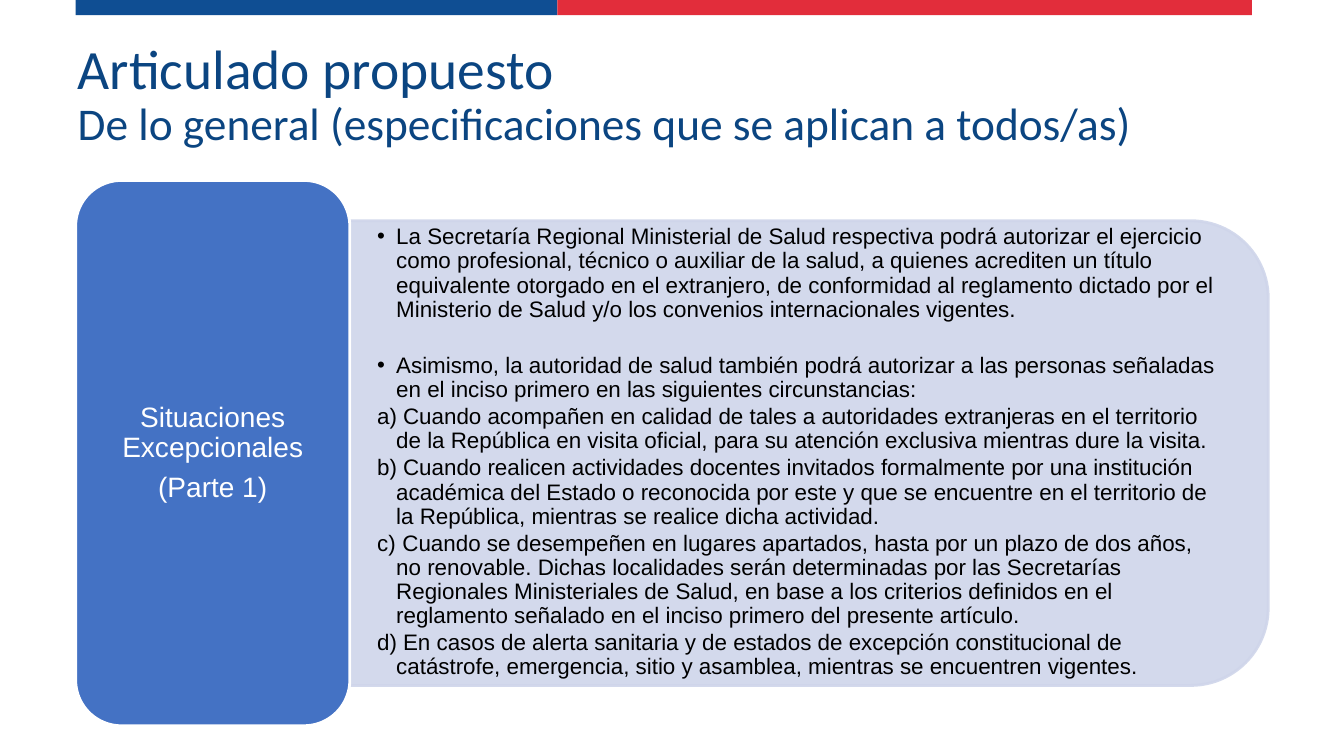
import pptx
import pptx.dml.color
import pptx.enum.shapes
import pptx.enum.text
import pptx.oxml.ns
import pptx.util
import lxml.etree

RGB = pptx.dml.color.RGBColor
KIND = pptx.enum.shapes.MSO_SHAPE
ALIGN = pptx.enum.text.PP_ALIGN
Pt = pptx.util.Pt
Inches = pptx.util.Inches

NAVY = RGB(0x0F, 0x4E, 0x93)
RED = RGB(0xE2, 0x2D, 0x3B)
INK = RGB(0x0B, 0x45, 0x81)
BLUE = RGB(0x44, 0x72, 0xC4)
PALE = RGB(0xCF, 0xD5, 0xEA)
WHITE = RGB(0xFF, 0xFF, 0xFF)
BLACK = RGB(0, 0, 0)

POINTS = [
    "La Secretaría Regional Ministerial de Salud respectiva podrá autorizar el ejercicio como profesional, "
    "técnico o auxiliar de la salud, a quienes acrediten un título equivalente otorgado en el extranjero, "
    "de conformidad al reglamento dictado por el Ministerio de Salud y/o los convenios internacionales vigentes.",
    "Asimismo, la autoridad de salud también podrá autorizar a las personas señaladas en el inciso primero "
    "en las siguientes circunstancias:",
]
CASES = [
    " Cuando acompañen en calidad de tales a autoridades extranjeras en el territorio de la República "
    "en visita oficial, para su atención exclusiva mientras dure la visita.",
    " Cuando realicen actividades docentes invitados formalmente por una institución académica del Estado "
    "o reconocida por este y que se encuentre en el territorio de la República, mientras se realice dicha actividad.",
    " Cuando se desempeñen en lugares apartados, hasta por un plazo de dos años, no renovable. Dichas "
    "localidades serán determinadas por las Secretarías Regionales Ministeriales de Salud, en base a los "
    "criterios definidos en el reglamento señalado en el inciso primero del presente artículo.",
    " En casos de alerta sanitaria y de estados de excepción constitucional de catástrofe, emergencia, "
    "sitio y asamblea, mientras se encuentren vigentes.",
]
DOT = ("a:buChar", {"char": "•"})
LETTER = ("a:buAutoNum", {"type": "alphaLcParenR"})


def add_node(parent, tag, attrs):
    node = lxml.etree.SubElement(parent, pptx.oxml.ns.qn(tag))
    for key, value in attrs.items():
        node.set(key, value)


def set_all(target, values):
    for key, value in values.items():
        setattr(target, key, value)


class Board:
    """Draws on one slide; boxes are (left, top, width, height) in percent of the slide."""

    def __init__(self, deck):
        self.deck = deck
        self.slide = deck.slides.add_slide(deck.slide_layouts[1])

    def place(self, shape, box):
        wide, high = self.deck.slide_width, self.deck.slide_height
        sizes = (wide, high, wide, high)
        names = ("left", "top", "width", "height")
        set_all(shape, {n: int(s * b / 100) for n, s, b in zip(names, sizes, box)})

    def shape(self, kind, box, fill, line=None, alpha=None):
        item = self.slide.shapes.add_shape(kind, 0, 0, 0, 0)
        self.place(item, box)
        item.shadow.inherit = False
        item.fill.solid()
        item.fill.fore_color.rgb = fill
        if line is None:
            item.line.fill.background()
        else:
            item.line.color.rgb = line
            item.line.width = Pt(2)
        if alpha:
            for node in list(item.element.spPr.iter(pptx.oxml.ns.qn("a:srgbClr"))):
                add_node(node, "a:alpha", {"val": str(alpha * 1000)})
        return item

    def turn(self, item):
        """Turn a shape a quarter clockwise, keeping the box that it covers."""
        mid_x, mid_y = item.left + item.width // 2, item.top + item.height // 2
        wide, high = item.height, item.width
        set_all(item, {"width": wide, "height": high, "left": mid_x - wide // 2,
                       "top": mid_y - high // 2, "rotation": 90})

    def frame(self, item, side, edge):
        frame = item.text_frame
        set_all(frame, {
            "word_wrap": True,
            "auto_size": pptx.enum.text.MSO_AUTO_SIZE.NONE,
            "vertical_anchor": pptx.enum.text.MSO_ANCHOR.MIDDLE,
            "margin_left": Inches(side), "margin_right": Inches(side),
            "margin_top": Inches(edge), "margin_bottom": Inches(edge),
        })
        return frame

    def para(self, frame, first, align, after=0):
        para = frame.paragraphs[0] if first else frame.add_paragraph()
        set_all(para, {"alignment": align, "line_spacing": 0.9,
                       "space_before": Pt(0), "space_after": Pt(after)})
        return para

    def run(self, para, text, name, size, color):
        run = para.add_run()
        run.text = text
        set_all(run.font, {"name": name, "size": Pt(size)})
        run.font.color.rgb = color

    def title(self, box, lines):
        item = self.slide.shapes.title
        self.place(item, box)
        para = self.para(self.frame(item, 0.1, 0.05), True, ALIGN.LEFT)
        for index, (text, size) in enumerate(lines):
            if index:
                para.add_line_break()
            self.run(para, text, "Calibri", size, INK)

    def label(self, item, lines):
        frame = self.frame(item, 0.08, 0.04)
        for index, text in enumerate(lines):
            para = self.para(frame, index == 0, ALIGN.CENTER, 7)
            self.run(para, text, "Arial", 20, WHITE)

    def body(self, box, rows):
        """Fill the body placeholder with (text, bullet, space after) rows, above the panel."""
        item = self.slide.placeholders[1]
        self.place(item, box)
        self.slide.shapes.element.append(item.element)
        frame = self.frame(item, 0.27, 0.14)
        hang = Inches(0.19)
        for index, (text, (tag, attrs), after) in enumerate(rows):
            para = self.para(frame, index == 0, ALIGN.LEFT, after)
            props = para._p.get_or_add_pPr()
            props.set("marL", str(hang))
            props.set("indent", str(-hang))
            add_node(props, tag, attrs)
            self.run(para, text, "Arial", 16, BLACK)


def main():
    deck = pptx.Presentation()
    set_all(deck, {"slide_width": Inches(13.33), "slide_height": Inches(7.5)})
    board = Board(deck)

    board.shape(KIND.RECTANGLE, (5.63, 0, 35.85, 2), NAVY)
    board.shape(KIND.RECTANGLE, (41.48, 0, 51.68, 2), RED)
    board.title((5.03, 8.67, 80.78, 8), [
        ("Articulado propuesto", 39.6),
        ("De lo general (especificaciones que se aplican a todos/as)", 32.4),
    ])

    panel = board.shape(KIND.ROUND_2_SAME_RECTANGLE, (26.03, 29.2, 68.33, 61.47), PALE, PALE, 90)
    board.turn(panel)
    rows = [(text, DOT, after) for text, after in zip(POINTS, (23, 2))]
    rows += [(text, LETTER, 2) for text in CASES]
    board.body((26.03, 32.13, 66.6, 55.47), rows)

    tab = board.shape(KIND.ROUNDED_RECTANGLE, (5.63, 23.87, 20.4, 72.13), BLUE, WHITE)
    board.label(tab, ["Situaciones Excepcionales", "(Parte 1)"])
    deck.save("out.pptx")


if __name__ == "__main__":
    main()
